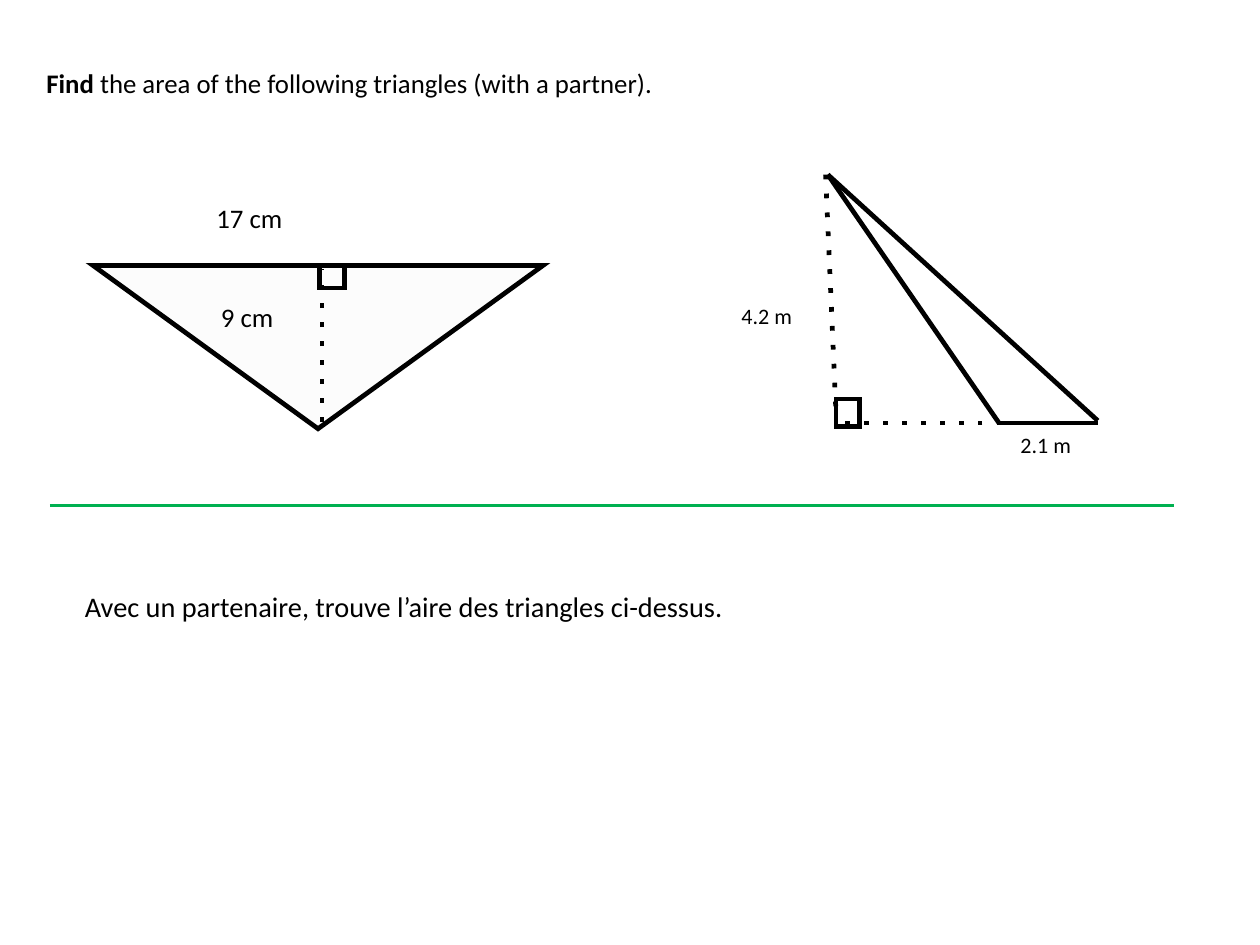
from lxml.etree import SubElement
from pptx import Presentation
from pptx.dml.color import RGBColor
from pptx.enum.shapes import MSO_CONNECTOR, MSO_SHAPE
from pptx.enum.text import MSO_AUTO_SIZE
from pptx.oxml.ns import qn
from pptx.util import Pt

COLORS = {"ink": "000000", "divider": "00B050", "triangle": "FCFCFC"}
FONT = "Calibri"
SLIDE_SIZE = (800, 600)

INSTRUCTIONS = [
    ([("Find", True), (" the area of the following triangles (with a partner).", False)],
     (22.3, 38.9, 486.7, 28.1), 17),
    ([("Avec un partenaire, trouve l’aire des triangles ci-dessus.", False)],
     (46.8, 370.8, 511.9, 28.8), 18),
]
DIVIDER = ((31.7, 321.1), (745.2, 321.1))

FIGURES = [
    {
        "triangle": (59, 168.5, 285.8, 103.7),
        "right_angle": (203, 168.5, 15.8, 14.4),
        "sides": [],
        "dotted": [((204.5, 267.8), (204.5, 170.6))],
        "joined": [],
        "labels": [("17 cm", (130.3, 124.6, 110.2, 28.1), 17),
                   ("9 cm", (133.2, 187.2, 95.8, 28.1), 17)],
    },
    {
        "triangle": None,
        "right_angle": (530.8, 253.4, 15, 17.4),
        "sides": [((697, 268.6), (634.3, 268.6)),
                  ((634.3, 268.6), (525.6, 110.9)),
                  ((697, 267.1), (525.6, 110.9))],
        "dotted": [((635.8, 268.6), (532.8, 268.6))],
        "joined": [((524.2, 110.9), (530.8, 262.1))],
        "labels": [("4.2 m", (463.7, 188.6, 66.2, 24.5), 14),
                   ("2.1 m", (640.8, 270.7, 66.2, 24.5), 14)],
    },
]


def points(values):
    return [Pt(value) for value in values]


def set_line(shape, color="ink", width=3, dash=None):
    shape.line.color.rgb = RGBColor.from_string(COLORS[color])
    shape.line.width = Pt(width)
    outline = shape.element.spPr.find(qn("a:ln"))
    if dash:
        SubElement(outline, qn("a:prstDash"), val=dash)
    SubElement(outline, qn("a:miter"), lim="800000")


def add_line(shapes, ends, **style):
    start, end = ends
    connector = shapes.add_connector(MSO_CONNECTOR.STRAIGHT, *points(start + end))
    set_line(connector, **style)
    SubElement(connector.element.spPr, qn("a:effectLst"))
    return connector


def add_outline(shapes, kind, box, fill=None):
    shape = shapes.add_shape(kind, *points(box))
    shape.shadow.inherit = False
    if fill:
        shape.fill.solid()
        shape.fill.fore_color.rgb = RGBColor.from_string(COLORS[fill])
    else:
        shape.fill.background()
    set_line(shape)
    return shape


def add_text(shapes, runs, box, size):
    frame = shapes.add_textbox(*points(box)).text_frame
    frame.word_wrap = True
    frame.auto_size = MSO_AUTO_SIZE.SHAPE_TO_FIT_TEXT
    paragraph = frame.paragraphs[0]
    paragraph.font.name = FONT
    paragraph.font.size = Pt(size)
    paragraph.font.color.rgb = RGBColor.from_string(COLORS["ink"])
    for text, bold in runs:
        run = paragraph.add_run()
        run.text = text
        if bold:
            run.font.bold = True


def add_figure(slide, figure):
    shapes = slide.shapes.add_group_shape().shapes
    if figure["triangle"]:
        triangle = add_outline(
            shapes, MSO_SHAPE.ISOSCELES_TRIANGLE, figure["triangle"], "triangle")
        triangle.rotation = 180
    for ends in figure["sides"]:
        add_line(shapes, ends)
    for ends in figure["dotted"]:
        add_line(shapes, ends, dash="dot")
    right_angle = add_outline(shapes, MSO_SHAPE.RECTANGLE, figure["right_angle"])
    for ends in figure["joined"]:
        add_line(shapes, ends, dash="dot").end_connect(right_angle, 1)
    for text, box, size in figure["labels"]:
        add_text(shapes, [(text, False)], box, size)


def main():
    """Build the triangle area exercise slide."""
    presentation = Presentation()
    presentation.slide_width, presentation.slide_height = points(SLIDE_SIZE)
    slide = presentation.slides.add_slide(presentation.slide_layouts[6])
    for figure in FIGURES:
        add_figure(slide, figure)
    add_line(slide.shapes, DIVIDER, color="divider", width=2.25)
    for runs, box, size in INSTRUCTIONS:
        add_text(slide.shapes, runs, box, size)
    presentation.save("out.pptx")


if __name__ == "__main__":
    main()
